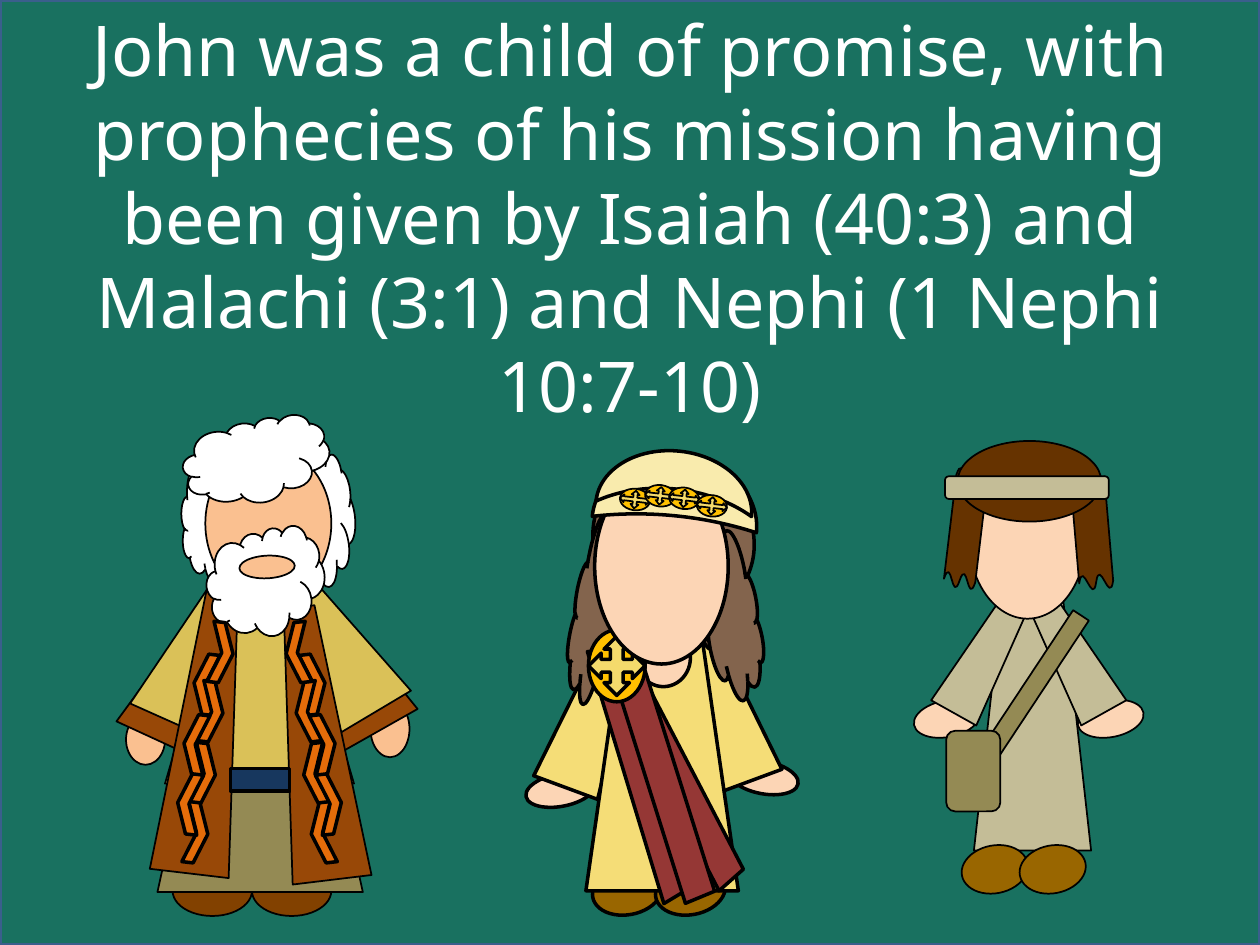
from pptx import Presentation
from pptx.dml.color import RGBColor
from pptx.enum.shapes import MSO_SHAPE as SHAPE
from pptx.enum.text import MSO_ANCHOR, MSO_AUTO_SIZE, PP_ALIGN
from pptx.util import Inches, Pt

GREEN, BLUE_EDGE, WHITE, BLACK = "197160", "3A5F8C", "FFFFFF", "000000"
TAN, ROBE_BROWN, SHOE_BROWN, GOLD = "FAC090", "984807", "824100", "DAC158"
OLIVE, ORANGE, NAVY = "948A54", "E46C0A", "17375E"
SKIN, LINEN, SANDAL, DARK_HAIR = "FCD5B5", "C4BD97", "996600", "663300"
YELLOW, MAROON, HAIR, CREAM = "F5DD77", "953735", "83644D", "F9EBAD"
COIN, COIN_CROSS = "FFC000", "F4DA6C"


def rgb(color):
    return RGBColor.from_string(color)


class Canvas:
    def __init__(self, slide, font="Noto Sans"):
        self.slide = slide
        self.font = font
        self.start_figure(None)

    def start_figure(self, line_width):
        """Open a new group for the shapes that follow; None draws on the slide."""
        self.line_width = line_width
        self.target = self.slide.shapes
        if line_width is not None:
            self.target = self.target.add_group_shape().shapes

    def shape(self, kind, box, fill, rot=0, adj=(), flip=False, line=BLACK, width=None):
        sp = self.target.add_shape(kind, *map(Inches, box))
        sp.shadow.inherit = False
        sp.fill.solid()
        sp.fill.fore_color.rgb = rgb(fill)
        sp.line.color.rgb = rgb(line)
        sp.line.width = Pt(width or self.line_width)
        sp.rotation = rot
        for i, value in enumerate(adj):
            sp.adjustments[i] = value
        if flip:
            sp._element.spPr.get_or_add_xfrm().set("flipH", "1")

    def ellipse(self, box, fill, rot=0, **style):
        self.shape(SHAPE.OVAL, box, fill, rot, **style)

    def trapezoid(self, box, fill, rot=0, **style):
        self.shape(SHAPE.TRAPEZOID, box, fill, rot, **style)

    def cloud(self, box, fill, rot=0, **style):
        self.shape(SHAPE.CLOUD, box, fill, rot, **style)

    def medallion(self, box, cross_height, rot=0, width=None):
        """Gold disc with a four-way arrow centred on it."""
        left, top, w, h = box
        cross = (left, top + (h - cross_height) / 2, w, cross_height)
        self.ellipse(box, COIN, rot, width=width)
        self.shape(SHAPE.QUAD_ARROW, cross, COIN_CROSS, rot, width=width)

    def text(self, box, words, size, color):
        tb = self.target.add_textbox(*map(Inches, box))
        tf = tb.text_frame
        tf.word_wrap = True
        tf.auto_size = MSO_AUTO_SIZE.SHAPE_TO_FIT_TEXT
        tf.vertical_anchor = MSO_ANCHOR.TOP
        tf.text = words
        p = tf.paragraphs[0]
        p.alignment = PP_ALIGN.CENTER
        font = p.runs[0].font
        font.name, font.size = self.font, Pt(size)
        font.color.rgb = rgb(color)


def draw_elder(c):
    slant = (0.305,)
    c.start_figure(1)
    for x in (1.37, 2):
        c.ellipse((x, 6.87, 0.63, 0.4), SHOE_BROWN)
    c.ellipse((1, 5.67, 0.31, 0.4), TAN)
    for box, fill, rot in (
        ((1.14, 4.74, 0.81, 1.21), ROBE_BROWN, 24.7),
        ((1.23, 4.66, 0.63, 1.1), GOLD, 24.1),
        ((1.25, 4.81, 1.63, 2.27), OLIVE, 0),
        ((1.31, 4.66, 1.5, 1.56), GOLD, 0),
        ((1.32, 4.66, 0.63, 2.28), ROBE_BROWN, 6.7),
    ):
        c.trapezoid(box, fill, rot, adj=slant)
    c.cloud((1.44, 3.6, 0.5, 1.01), WHITE)
    c.cloud((2.26, 3.62, 0.56, 1.04), WHITE, 352.9)
    c.ellipse((1.63, 3.55, 1, 1.21), TAN)
    c.ellipse((2.94, 5.56, 0.31, 0.45), TAN)
    c.trapezoid((2.39, 4.66, 0.67, 1.21), ROBE_BROWN, 330.5, adj=slant)
    c.trapezoid((2.29, 4.57, 0.72, 1.18), GOLD, 329.2, adj=slant)
    c.cloud((1.45, 3.33, 1.17, 0.66), WHITE, 352.9)
    c.trapezoid((2.19, 4.81, 0.63, 2.18), ROBE_BROWN, 353.1, adj=slant)
    c.cloud((1.64, 4.2, 0.94, 0.85), WHITE, 352.9)
    c.ellipse((2.03, 4.28, 0.18, 0.44), TAN, 87.1)

    zigzag = ((2.4, 5.19, 353.4), (2.35, 5.41, 173.4), (2.41, 5.9, 173.4),
              (2.48, 5.67, 353.4), (2.47, 6.37, 173.4), (2.27, 4.94, 173.4),
              (2.53, 6.14, 353.4))
    for mirrored in (False, True):
        for x, y, rot in zigzag:
            if mirrored:
                x, rot = 3.94 - x, 360 - rot
            c.shape(SHAPE.CHEVRON, (x, y, 0.18, 0.48), ORANGE, rot,
                    flip=mirrored, width=2)
    c.shape(SHAPE.RECTANGLE, (1.83, 6.1, 0.47, 0.18), NAVY, width=2)


def draw_traveller(c):
    tilt = 349.2
    c.start_figure(1)
    for x in (7.25, 8.55):
        c.ellipse((x, 5.56, 0.53, 0.29), SKIN, tilt)
    c.trapezoid((7.73, 4.66, 0.93, 2.09), LINEN)
    c.ellipse((7.63, 6.71, 0.53, 0.38), SANDAL, tilt)
    c.trapezoid((8.28, 4.6, 0.41, 1.13), LINEN, 330.8)
    c.ellipse((8.09, 6.71, 0.53, 0.38), SANDAL, tilt)
    c.trapezoid((7.64, 4.6, 0.41, 1.13), LINEN, 29.2, flip=True)
    c.ellipse((7.69, 3.62, 0.93, 1.29), SKIN)
    c.shape(SHAPE.DOUBLE_WAVE, (8.53, 3.73, 0.27, 0.95), DARK_HAIR, 355.1)
    c.shape(SHAPE.DOUBLE_WAVE, (7.54, 3.72, 0.25, 0.95), DARK_HAIR, 6.8)
    c.ellipse((7.85, 3.25, 0.64, 1.14), DARK_HAIR, 90)
    c.shape(SHAPE.ROUNDED_RECTANGLE, (8.06, 3.22, 0.18, 1.3), LINEN, 90)
    c.shape(SHAPE.RECTANGLE, (8.06, 4.75, 0.15, 1.61), OLIVE, 33.5)
    c.shape(SHAPE.ROUNDED_RECTANGLE, (7.51, 5.8, 0.43, 0.64), OLIVE)


def draw_noble(c):
    c.start_figure(2)
    for x in (4.7, 5.2):
        c.ellipse((x, 6.88, 0.56, 0.38), SANDAL, 349.2)
    c.ellipse((4.17, 6.14, 0.56, 0.26), SKIN, 349.2)
    c.ellipse((5.78, 6.04, 0.56, 0.26), SKIN, 10.8, flip=True)
    c.trapezoid((4.44, 5.02, 0.54, 1.27), YELLOW, 20.3, flip=True)
    c.trapezoid((5.51, 5.01, 0.5, 1.22), YELLOW, 339.7)
    c.trapezoid((4.65, 4.96, 1.21, 2.11), YELLOW)
    c.shape(SHAPE.CHORD, (4.73, 3.63, 1.23, 1.31), HAIR, 127, adj=(27, 156.403))
    c.trapezoid((4.29, 5.96, 2.09, 0.25), MAROON, 62.5)
    c.cloud((4.57, 3.93, 0.43, 1.67), HAIR, 11.2)
    c.cloud((5.51, 4.09, 0.5, 1.48), HAIR, 348.8, flip=True)
    c.ellipse((5.05, 4.99, 0.43, 0.46), SKIN)
    c.trapezoid((4.04, 6.01, 2.09, 0.25), MAROON, 73.1)
    c.trapezoid((4.2, 6.01, 2.09, 0.25), MAROON, 72.5, adj=(0.086,))
    c.medallion((4.67, 5, 0.45, 0.57), 0.47)
    c.ellipse((4.72, 3.72, 1.06, 1.55), SKIN)
    c.shape(SHAPE.MOON, (5.1, 3.23, 0.56, 1.31), CREAM, 95.7, adj=(0.875,))
    c.shape(SHAPE.MOON, (5.14, 3.19, 0.46, 1.24), CREAM, 95.7, adj=(0.657,))
    for x, y in ((4.92, 3.88), (5.12, 3.85), (5.31, 3.87), (5.53, 3.93)):
        c.medallion((x, y, 0.24, 0.17), 0.14, 6.7, width=1)


def main():
    prs = Presentation()
    prs.slide_width, prs.slide_height = Inches(10), Inches(7.5)
    c = Canvas(prs.slides.add_slide(prs.slide_layouts[6]))
    c.shape(SHAPE.RECTANGLE, (0, 0, 10, 7.5), GREEN, line=BLUE_EDGE, width=2)
    c.text((0, 0, 10, 4.14),
           "John was a child of promise, with prophecies of his mission having "
           "been given by Isaiah (40:3) and Malachi (3:1) and Nephi "
           "(1 Nephi 10:7-10)", 40, WHITE)
    draw_elder(c)
    draw_traveller(c)
    draw_noble(c)
    prs.save("out.pptx")


if __name__ == "__main__":
    main()
